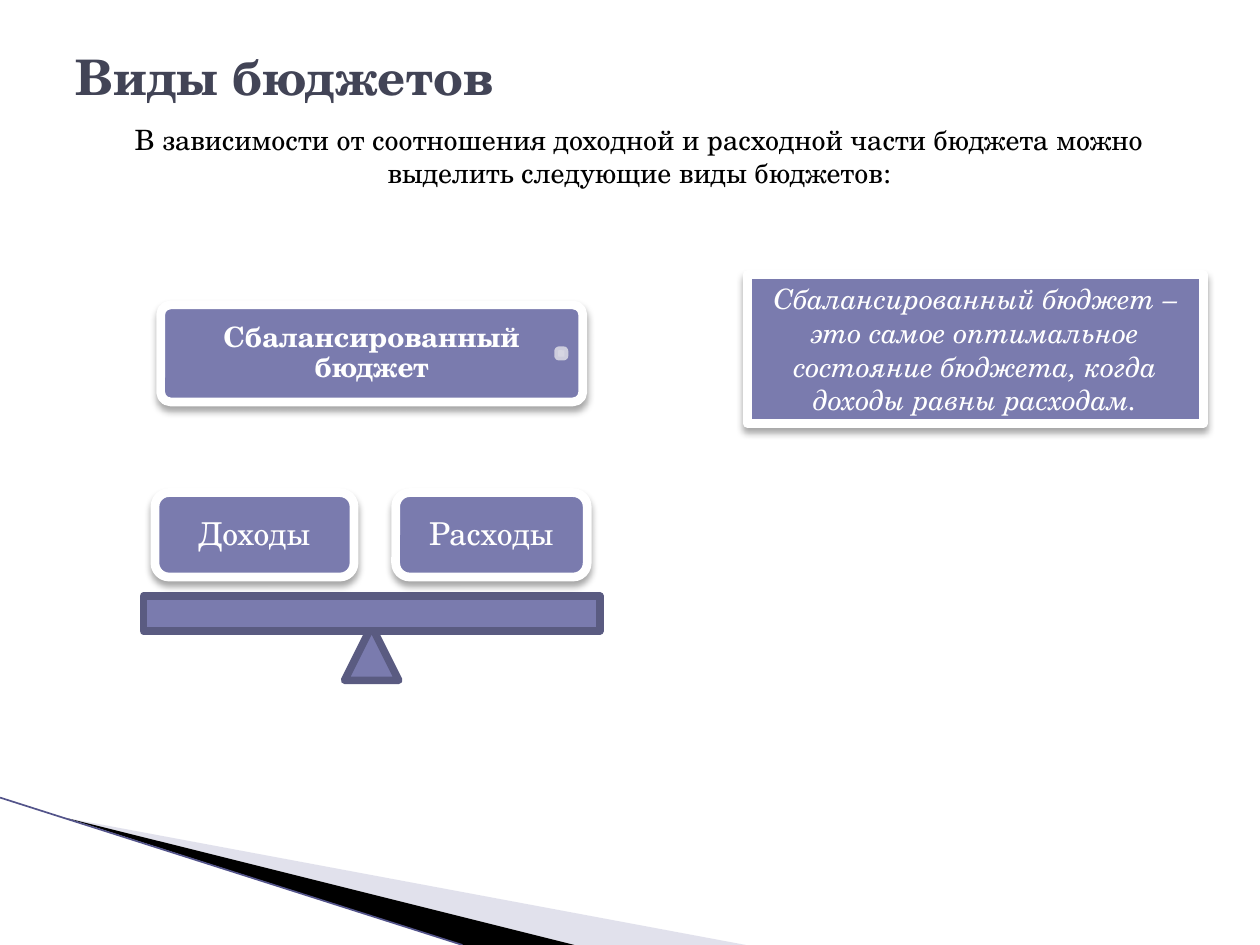
import dataclasses

import lxml.etree
import pptx
import pptx.dml.color
import pptx.enum.shapes
import pptx.enum.text
import pptx.oxml.ns
import pptx.util

SHAPE = pptx.enum.shapes.MSO_SHAPE
ALIGN = pptx.enum.text.PP_ALIGN
ANCHOR = pptx.enum.text.MSO_ANCHOR
COLUMNS, ROWS = 100, 75
CELL = pptx.util.Inches(0.1)


@dataclasses.dataclass(frozen=True)
class Theme:
    font: str = "TeX Gyre Schola"
    title_size: int = 28
    weight_size: int = 18
    body_size: int = 16
    frame_width: float = 5
    beam_width: float = 4.33
    ink: str = "000000"
    title: str = "424456"
    panel: str = "7A7BAE"
    outline: str = "5A5B81"
    light: str = "FFFFFF"
    dot: str = "D7D7E3"
    wedge: str = "B6B6D1"
    edge: str = "53548A"


THEME = Theme()


@dataclasses.dataclass(frozen=True)
class Box:
    left: float
    top: float
    width: float
    height: float

    def area(self, left, top, width, height):
        return Box(self.left + left, self.top + top, width, height)

    def point(self, across, down):
        return (round((self.left + across * self.width) * CELL),
                round((self.top + down * self.height) * CELL))

    def emu(self):
        return [round(n * CELL) for n in (self.left, self.top, self.width, self.height)]


def rgb(value):
    return pptx.dml.color.RGBColor.from_string(value)


def add_xml(parent, tag, **attributes):
    return lxml.etree.SubElement(parent, pptx.oxml.ns.qn(tag), attributes)


def set_alpha(shape, percent):
    for colour in shape._element.spPr.iter(pptx.oxml.ns.qn("a:srgbClr")):
        add_xml(colour, "a:alpha", val=str(percent * 1000))


def paint(shape, fill, line=None, width=0):
    shape.shadow.inherit = False
    shape.fill.solid()
    shape.fill.fore_color.rgb = rgb(fill)
    if line is None:
        shape.line.fill.background()
        return
    shape.line.color.rgb = rgb(line)
    shape.line.width = pptx.util.Pt(width)
    add_xml(shape.line._get_or_add_ln(), "a:round")


def write(shape, text, size, color, align=ALIGN.CENTER, anchor=ANCHOR.MIDDLE,
          bold=False, italic=False, spacing=None):
    frame = shape.text_frame
    frame.word_wrap = True
    frame.auto_size = pptx.enum.text.MSO_AUTO_SIZE.NONE
    frame.vertical_anchor = anchor
    paragraph = frame.paragraphs[0]
    paragraph.alignment = align
    paragraph.line_spacing = spacing
    run = paragraph.add_run()
    run.text = text
    run.font.name = THEME.font
    run.font.size = pptx.util.Pt(size)
    run.font.bold = bold
    run.font.italic = italic
    run.font.color.rgb = rgb(color)


def add_panel(slide, box, kind):
    panel = slide.shapes.add_shape(kind, *box.emu())
    paint(panel, THEME.panel, THEME.light, THEME.frame_width)
    effects = panel._element.spPr.find(pptx.oxml.ns.qn("a:effectLst"))
    shadow = add_xml(effects, "a:outerShdw", blurRad=str(pptx.util.Pt(4)),
                     dist=str(pptx.util.Pt(3)), dir="5400000", algn="ctr", rotWithShape="0")
    add_xml(add_xml(shadow, "a:srgbClr", val=THEME.ink), "a:alpha", val="35000")
    return panel


def add_wedge(slide, box, corners, fill):
    start, *others = [box.point(*corner) for corner in corners]
    builder = slide.shapes.build_freeform(*start)
    builder.add_line_segments(others)
    wedge = builder.convert_to_shape()
    paint(wedge, fill)
    return wedge


def add_corner_decor(slide, box):
    tip = (0.09, 0.14)
    pale = add_wedge(slide, box, [tip, (1, 1), (0.77, 1)], THEME.wedge)
    set_alpha(pale, 40)
    add_wedge(slide, box, [tip, (0.77, 1), (0.62, 1)], THEME.ink)
    edge = slide.shapes.add_connector(pptx.enum.shapes.MSO_CONNECTOR.STRAIGHT,
                                      *box.point(0, 0), *box.point(0.62, 1))
    edge.line.color.rgb = rgb(THEME.edge)
    edge.line.width = pptx.util.Pt(0.95)
    add_xml(edge._element.spPr, "a:effectLst")


def add_heading(slide, box):
    title = slide.shapes.title
    title.left, title.top, title.width, title.height = box.emu()
    write(title, "Виды бюджетов", THEME.title_size, THEME.title, ALIGN.LEFT, bold=True)


def add_intro(slide, box):
    intro = slide.shapes.add_textbox(*box.emu())
    write(intro, "В зависимости от соотношения доходной и расходной части бюджета "
          "можно выделить следующие виды бюджетов:",
          THEME.body_size, THEME.ink, anchor=ANCHOR.TOP)


def add_balance(slide, box):
    name_width, name_height, dot_size = 33.5, 7.7, 0.5
    name_left = (box.width - name_width) / 2
    name = add_panel(slide, box.area(name_left, 0, name_width, name_height),
                     SHAPE.ROUNDED_RECTANGLE)
    name.adjustments[0] = 0.1
    write(name, "Сбалансированный бюджет", THEME.body_size, THEME.light,
          bold=True, spacing=0.9)

    dot = slide.shapes.add_shape(
        SHAPE.ROUNDED_RECTANGLE,
        *box.area(32.9, (name_height - dot_size) / 2, dot_size, dot_size).emu())
    dot.adjustments[0] = 0.1
    paint(dot, THEME.dot, THEME.dot, THEME.beam_width)
    set_alpha(dot, 90)

    pivot, beam = 4.3, 2.8
    supports = [
        (SHAPE.ISOSCELES_TRIANGLE,
         box.area((box.width - pivot) / 2, box.height - pivot, pivot, pivot)),
        (SHAPE.RECTANGLE, box.area(0, 23.1, box.width, beam)),
    ]
    for kind, place in supports:
        support = slide.shapes.add_shape(kind, *place.emu())
        paint(support, THEME.panel, THEME.outline, THEME.beam_width)

    for label, left, width in (("Доходы", 0.9, 15.8), ("Расходы", 20, 15.2)):
        weight = add_panel(slide, box.area(left, 14.9, width, 6.7),
                           SHAPE.ROUNDED_RECTANGLE)
        write(weight, label, THEME.weight_size, THEME.light, spacing=0.9)


def add_definition(slide, box):
    definition = add_panel(slide, box, SHAPE.RECTANGLE)
    write(definition, "Сбалансированный бюджет – это самое оптимальное состояние "
          "бюджета, когда доходы равны расходам.",
          THEME.body_size, THEME.light, italic=True)


def main():
    deck = pptx.Presentation()
    deck.slide_width, deck.slide_height = COLUMNS * CELL, ROWS * CELL
    slide = deck.slides.add_slide(deck.slide_layouts.get_by_name("Title Only"))
    page = Box(0, 0, COLUMNS, ROWS)
    add_corner_decor(slide, page.area(0, 63.3, 59.2, 11.7))
    add_intro(slide, page.area(6.5, 9.2, 88.5, 8))
    add_heading(slide, page.area(5, 3, 90, 6.1))
    add_balance(slide, page.area(11.4, 24.2, 36.2, 29.8))
    add_definition(slide, page.area(59.3, 21.8, 36.2, 11.8))
    deck.save("out.pptx")


if __name__ == "__main__":
    main()
